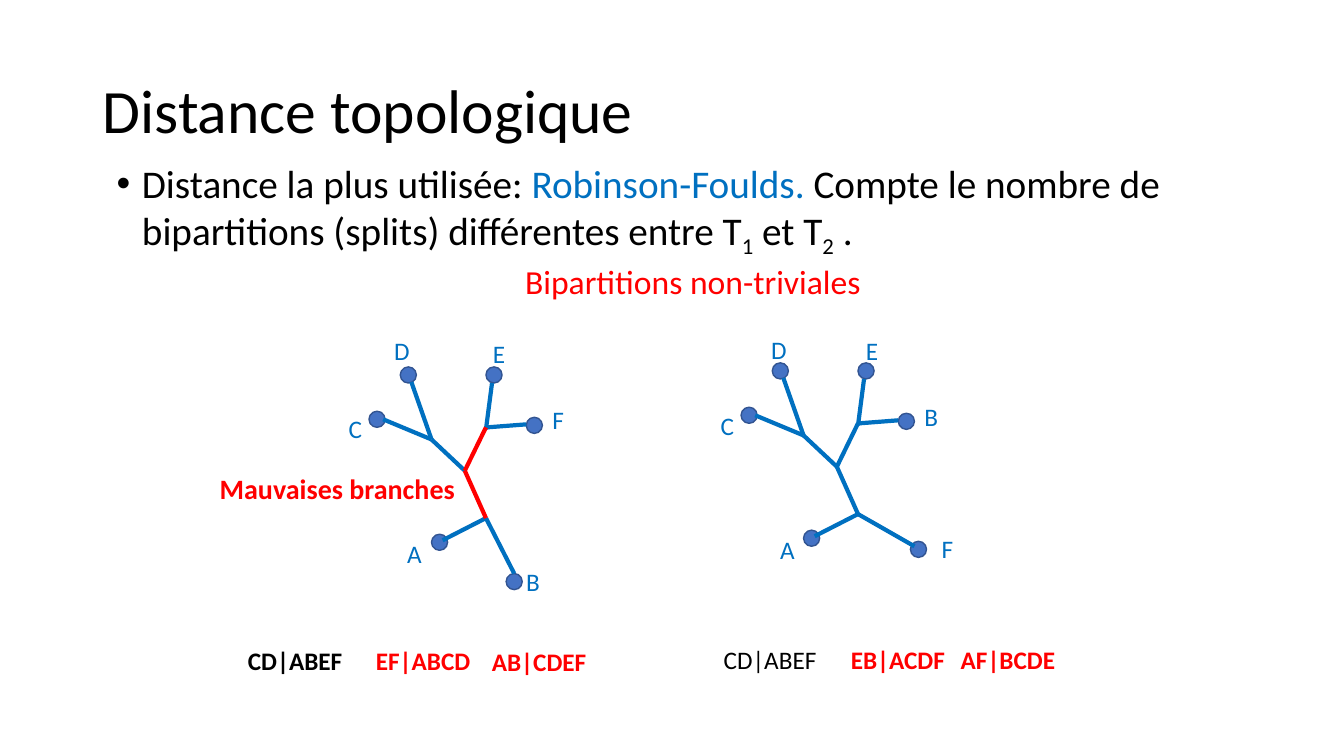
from lxml import etree
from pptx import Presentation
from pptx.dml.color import RGBColor
from pptx.enum.shapes import MSO_CONNECTOR, MSO_SHAPE
from pptx.enum.text import MSO_ANCHOR, MSO_AUTO_SIZE
from pptx.oxml.ns import qn
from pptx.util import Pt

STRAIGHT = MSO_CONNECTOR.STRAIGHT
ELLIPSE = MSO_SHAPE.OVAL
TOP, MIDDLE = MSO_ANCHOR.TOP, MSO_ANCHOR.MIDDLE
GROW, FIXED = MSO_AUTO_SIZE.SHAPE_TO_FIT_TEXT, MSO_AUTO_SIZE.NONE

PX = 9144
BLACK = RGBColor(0x00, 0x00, 0x00)
BLUE = RGBColor(0x00, 0x70, 0xC0)
RED = RGBColor(0xFF, 0x00, 0x00)
LEAF_FILL = RGBColor(0x44, 0x72, 0xC4)
LEAF_EDGE = RGBColor(0x32, 0x54, 0x91)

LEAF_SIZE = 16
LABEL_HEIGHT = 40
LABEL_WIDTHS = {"A": 35, "B": 34, "C": 34, "D": 37, "E": 33, "F": 32}

SHARED_LEAVES = [(397, 364), (366, 408), (482, 364), (522, 414), (428, 530)]
SHARED_BRANCHES = [
    ((380, 416), (428, 436)),
    ((408, 379), (428, 436)),
    ((488, 380), (482, 426)),
    ((522, 421), (483, 424)),
    ((439, 536), (482, 514)),
    ((428, 436), (461, 467)),
]
INNER_BRANCHES = [((482, 424), (461, 467)), ((461, 467), (482, 514))]
LAST_FORK = (482, 514)

TREES = [
    {
        "shift": (0, 0),
        "last_leaf": (502, 569),
        "last_tip": (510, 569),
        "inner_color": RED,
        "labels": {"C": (336, 405), "D": (381, 328), "E": (479, 331),
                   "F": (538, 396), "A": (394, 529), "B": (512, 557)},
    },
    {
        "shift": (369, -4),
        "last_leaf": (534, 541),
        "last_tip": (538, 546),
        "inner_color": BLUE,
        "labels": {"C": (705, 402), "D": (755, 327), "E": (849, 328),
                   "B": (907, 393), "A": (764, 525), "F": (924, 524)},
    },
]

SPLITS = [
    ("CD|ABEF", (236, 635, 115), BLACK, True),
    ("EF|ABCD", (363, 635, 120), RED, True),
    ("AB|CDEF", (478, 636, 115), RED, True),
    ("CD|ABEF", (708, 634, 117), BLACK, False),
    ("EB|ACDF", (834, 634, 114), RED, True),
    ("AF|BCDE", (943, 634, 115), RED, True),
]

DEFINITION = [
    ("Distance la plus utilisée: ", BLACK, False),
    ("Robinson-Foulds. ", BLUE, False),
    ("Compte le nombre de bipartitions (splits) différentes entre T", BLACK, False),
    ("1", BLACK, True),
    (" et T", BLACK, False),
    ("2", BLACK, True),
    (" .", BLACK, False),
]


def apply_format(target, values):
    for name, value in values.items():
        setattr(target, name, value)


def emu(*lengths):
    return [length * PX for length in lengths]


def add_run(paragraph, words, size, color, bold=False, subscript=False):
    run = paragraph.add_run()
    run.text = words
    apply_format(run.font, {"name": "Calibri", "size": Pt(size), "bold": bold})
    run.font.color.rgb = color
    if subscript:
        run.font._element.set("baseline", "-25000")


def add_frame(slide, box, frame_format):
    frame = slide.shapes.add_textbox(*emu(*box)).text_frame
    apply_format(frame, frame_format)
    return frame.paragraphs[0]


def add_label(slide, words, box, size, color, bold=False):
    line = add_frame(slide, box, {"word_wrap": False, "auto_size": GROW})
    add_run(line, words, size, color, bold)


def add_title(slide, words):
    line = add_frame(slide, (92, 40, 1150, 145), {
        "word_wrap": True, "auto_size": FIXED, "vertical_anchor": MIDDLE})
    line.line_spacing = 0.9
    add_run(line, words, 44, BLACK)


def add_definition(slide):
    item = add_frame(slide, (106, 158, 1163, 99), {
        "word_wrap": True, "auto_size": FIXED, "vertical_anchor": TOP})
    apply_format(item, {"line_spacing": 0.9, "space_before": Pt(10)})
    properties = item._p.get_or_add_pPr()
    properties.set("marL", str(25 * PX))
    properties.set("indent", str(-25 * PX))
    etree.SubElement(properties, qn("a:buFont"), typeface="Arial")
    etree.SubElement(properties, qn("a:buChar"), char="•")
    for words, color, subscript in DEFINITION:
        add_run(item, words, 28, color, subscript=subscript)


def add_leaf(slide, left, top):
    leaf = slide.shapes.add_shape(ELLIPSE, *emu(left, top, LEAF_SIZE, LEAF_SIZE))
    leaf.shadow.inherit = False
    leaf.fill.solid()
    leaf.fill.fore_color.rgb = LEAF_FILL
    leaf.line.color.rgb = LEAF_EDGE
    leaf.line.width = Pt(1)


def add_branch(slide, start, end, color):
    branch = slide.shapes.add_connector(STRAIGHT, *emu(*start, *end))
    branch.line.color.rgb = color
    branch.line.width = Pt(3)
    etree.SubElement(branch._element.spPr, qn("a:effectLst"))


def add_tree(slide, tree):
    def place(point):
        return point[0] + tree["shift"][0], point[1] + tree["shift"][1]

    for leaf in SHARED_LEAVES + [tree["last_leaf"]]:
        add_leaf(slide, *place(leaf))
    for start, end in SHARED_BRANCHES + [(LAST_FORK, tree["last_tip"])]:
        add_branch(slide, place(start), place(end), BLUE)
    for start, end in INNER_BRANCHES:
        add_branch(slide, place(start), place(end), tree["inner_color"])
    for taxon, corner in tree["labels"].items():
        add_label(slide, taxon, (*corner, LABEL_WIDTHS[taxon], LABEL_HEIGHT), 18, BLUE)


def main():
    deck = Presentation()
    deck.slide_width, deck.slide_height = emu(1333, 750)
    slide = deck.slides.add_slide(deck.slide_layouts[6])
    add_title(slide, "Distance topologique")
    for tree in TREES:
        add_tree(slide, tree)
    add_label(slide, "Bipartitions non-triviales", (511, 254, 357, 50), 24, RED)
    for split, corner_and_width, color, bold in SPLITS:
        add_label(slide, split, (*corner_and_width, LABEL_HEIGHT), 18, color, bold)
    add_label(slide, "Mauvaises branches", (208, 463, 256, 44), 20, RED, True)
    add_definition(slide)
    deck.save("out.pptx")


if __name__ == "__main__":
    main()
